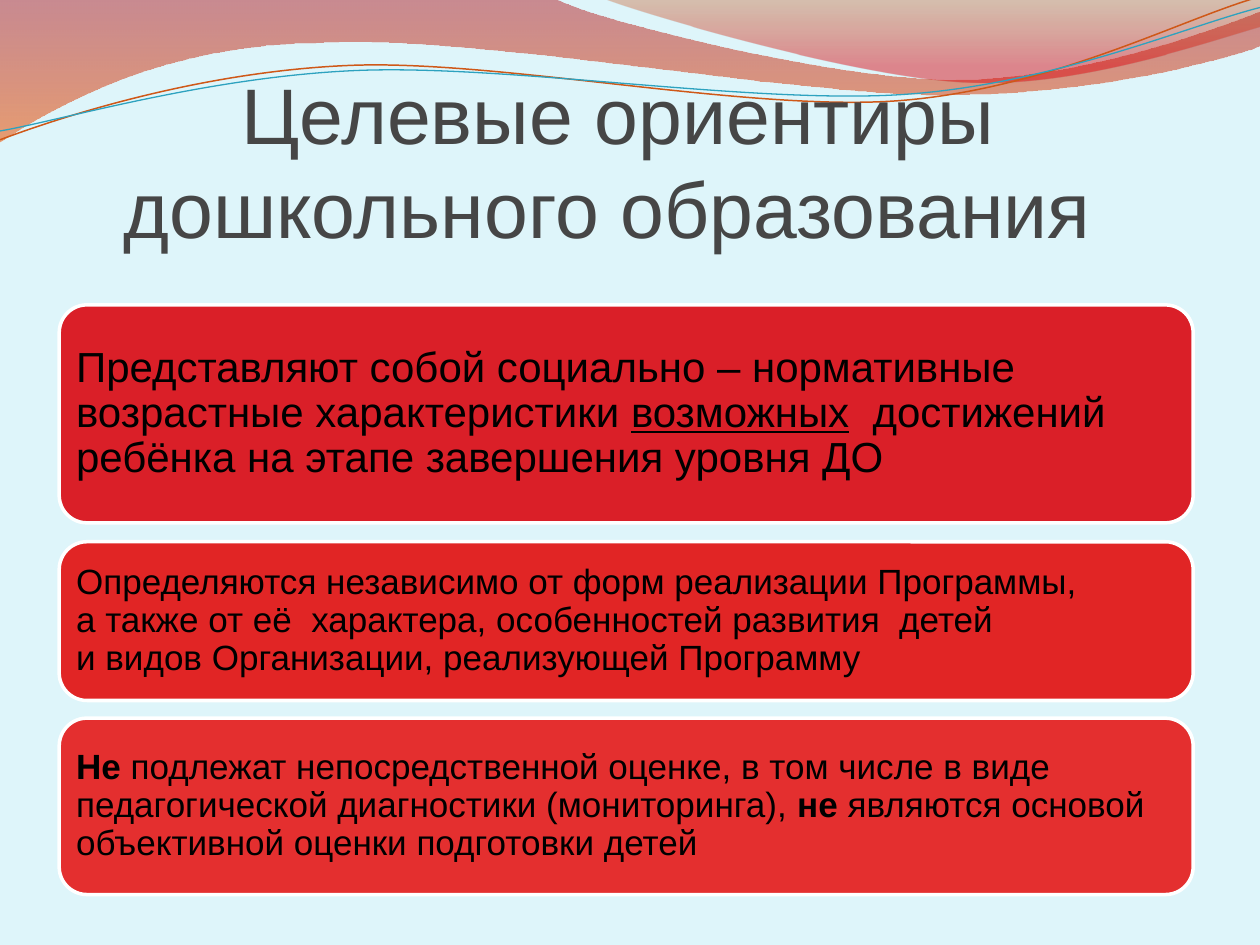
"""Build a slide on the target outcomes of preschool education."""
from dataclasses import dataclass
from math import cos, radians, sin

from lxml.etree import SubElement
from pptx import Presentation
from pptx.dml.color import RGBColor
from pptx.enum.shapes import MSO_SHAPE as Shape
from pptx.enum.text import MSO_ANCHOR as Anchor, MSO_AUTO_SIZE as AutoSize, PP_ALIGN as Align
from pptx.oxml.ns import qn
from pptx.util import Inches, Pt

FONT = "Arial"
CORNER = 0.22
PIVOT = (5, 0.58)


@dataclass
class Stop:
    position: float
    color: str
    opacity: int


@dataclass
class Wave:
    start: tuple
    curves: list
    stops: tuple = ()
    color: str = ""
    weight: float = 0
    tilt: float = 0


@dataclass
class Phrase:
    text: str
    bold: bool = False
    underline: bool = False


@dataclass
class Statement:
    top: float
    height: float
    fill: str
    size: int
    phrases: list


WAVES = [
    Wave((0, -0.01), [
        (4.4, -0.01), (4.76, 0.17, 6.64, 0.63, 7.58, 0.63), (8.53, 0.63, 9.58, 0.26, 10, 0.09),
        (10.01, 0.36), (9.83, 0.44, 8.7, 0.76, 7.46, 0.75), (6.22, 0.75, 3.82, 0.28, 2.57, 0.34),
        (1.29, 0.35, 0.46, 0.83, -0.01, 1.13),
    ], stops=(Stop(0, "AF0911", 45), Stop(1, "EE5300", 55))),
    Wave((4.79, -0.01), [
        (5.09, 0.11, 6.82, 0.62, 7.69, 0.65), (8.56, 0.69, 9.61, 0.32, 10, 0.21), (10, 0),
    ], stops=(Stop(0, "C24400", 30), Stop(0.8, "DC000B", 45))),
    Wave((0, 1.11), [
        (0.48, 0.93, 1.58, 0.57, 2.77, 0.52), (3.95, 0.47, 5.93, 0.89, 7.13, 0.8),
        (8.33, 0.71, 9.38, 0.15, 9.98, -0.02),
    ], color="CF5818", weight=0.85, tilt=-2.7),
    Wave((0, 1.04), [
        (0.47, 0.96, 1.64, 0.61, 2.83, 0.56), (4.03, 0.51, 5.97, 0.83, 7.17, 0.75),
        (8.36, 0.67, 9.41, 0.21, 10, 0.06),
    ], color="2DA2BF", weight=0.75, tilt=-2.7),
]

STATEMENTS = [
    Statement(2.42, 1.73, "DA1F28", 24, [
        Phrase("Представляют собой социально – нормативные возрастные характеристики "),
        Phrase("возможных", underline=True),
        Phrase("  достижений ребёнка на этапе завершения уровня ДО"),
    ]),
    Statement(4.3, 1.26, "E12525", 20, [
        Phrase("Определяются независимо от форм реализации Программы,\n"
               "а также от её  характера, особенностей развития  детей\n"
               "и видов Организации, реализующей Программу"),
    ]),
    Statement(5.7, 1.4, "E42F2F", 20, [
        Phrase("Не", bold=True),
        Phrase(" подлежат непосредственной оценке, в том числе в виде "
               "педагогической диагностики (мониторинга), "),
        Phrase("не", bold=True),
        Phrase(" являются основой объективной оценки подготовки детей"),
    ]),
]


def rgb(color: str) -> RGBColor:
    """Turn a hex string into a colour."""
    return RGBColor.from_string(color)


def level_points(coordinates: tuple, tilt: float) -> list:
    """Pair up coordinates and turn them back by the tilt of their wave."""
    angle = radians(-tilt)
    points = []
    for x, y in zip(coordinates[::2], coordinates[1::2]):
        dx, dy = x - PIVOT[0], y - PIVOT[1]
        points.append((Inches(PIVOT[0] + dx * cos(angle) - dy * sin(angle)),
                       Inches(PIVOT[1] + dx * sin(angle) + dy * cos(angle))))
    return points


def apply_gradient(fill, stops: tuple) -> None:
    """Fill from top to bottom with translucent colours."""
    fill.gradient()
    fill.gradient_angle = 270
    for gradient_stop, stop in zip(fill.gradient_stops, stops):
        gradient_stop.position = stop.position
        gradient_stop.color.rgb = rgb(stop.color)
    for color, stop in zip(fill._xPr.iter(qn("a:srgbClr")), stops):
        SubElement(color, qn("a:alpha"), val=str(stop.opacity * 1000))


def bend_segments(ribbon, curves: list) -> None:
    """Turn the segments that have control points into cubic curves."""
    segments = list(ribbon.element.iter(qn("a:lnTo")))
    for segment, (*controls, _) in zip(segments, curves):
        if controls:
            segment.tag = qn("a:cubicBezTo")
        for x, y in controls:
            SubElement(segment, qn("a:pt"), x=str(x - ribbon.left), y=str(y - ribbon.top))
        segment.append(segment[0])


def draw_wave(slide, wave: Wave):
    """Draw a filled or outlined wave."""
    start = level_points(wave.start, wave.tilt)[0]
    curves = [level_points(curve, wave.tilt) for curve in wave.curves]
    builder = slide.shapes.build_freeform(*start)
    builder.add_line_segments([curve[-1] for curve in curves], close=bool(wave.stops))
    ribbon = builder.convert_to_shape()
    bend_segments(ribbon, curves)
    ribbon.rotation = wave.tilt
    ribbon.shadow.inherit = False
    if wave.stops:
        apply_gradient(ribbon.fill, wave.stops)
        ribbon.line.fill.background()
    else:
        ribbon.fill.background()
        ribbon.line.color.rgb = rgb(wave.color)
        ribbon.line.width = Pt(wave.weight)
    return ribbon


def set_margins(frame, left: float, top: float, right: float, bottom: float) -> None:
    """Set the insets of a text frame in inches."""
    frame.margin_left, frame.margin_top = Inches(left), Inches(top)
    frame.margin_right, frame.margin_bottom = Inches(right), Inches(bottom)


def set_font(paragraph, size: int, color: str) -> None:
    """Set the common font of a paragraph."""
    paragraph.font.name = FONT
    paragraph.font.size = Pt(size)
    paragraph.font.color.rgb = rgb(color)


def write_heading(heading) -> None:
    """Place and format the slide title."""
    heading.left, heading.top = Inches(0.23), Inches(0.39)
    heading.width, heading.height = Inches(9.35), Inches(1.63)
    frame = heading.text_frame
    frame.text = "Целевые ориентиры дошкольного образования "
    frame.auto_size, frame.word_wrap = AutoSize.NONE, True
    frame.vertical_anchor = Anchor.BOTTOM
    set_margins(frame, 0, 0.05, 0, 0)
    frame.paragraphs[0].alignment = Align.CENTER
    set_font(frame.paragraphs[0], 45, "464646")


def draw_statement(slide, statement: Statement) -> None:
    """Draw a rounded panel with its statement."""
    panel = slide.shapes.add_shape(Shape.ROUNDED_RECTANGLE, Inches(0.47), Inches(statement.top),
                                   Inches(9), Inches(statement.height))
    panel.adjustments[0] = CORNER / statement.height
    panel.shadow.inherit = False
    panel.fill.solid()
    panel.fill.fore_color.rgb = rgb(statement.fill)
    panel.line.color.rgb = rgb("FFFFFF")
    panel.line.width = Pt(2)
    frame = panel.text_frame
    frame.word_wrap, frame.vertical_anchor = True, Anchor.MIDDLE
    set_margins(frame, 0.07, 0.07, 0.07, 0.07)
    paragraph = frame.paragraphs[0]
    paragraph.alignment, paragraph.line_spacing = Align.LEFT, 0.9
    set_font(paragraph, statement.size, "000000")
    for phrase in statement.phrases:
        for index, line in enumerate(phrase.text.split("\n")):
            if index:
                paragraph.add_line_break()
            run = paragraph.add_run()
            run.text = line
            run.font.bold, run.font.underline = phrase.bold, phrase.underline


if __name__ == "__main__":
    deck = Presentation()
    deck.slide_width, deck.slide_height = Inches(10), Inches(7.5)
    slide = deck.slides.add_slide(deck.slide_layouts[5])
    slide.background.fill.solid()
    slide.background.fill.fore_color.rgb = rgb("DEF5FA")
    write_heading(slide.shapes.title)
    ribbons = [draw_wave(slide, wave) for wave in WAVES]
    ribbons[-1].element.addnext(slide.shapes.title.element)
    for statement in STATEMENTS:
        draw_statement(slide, statement)
    deck.save("out.pptx")
